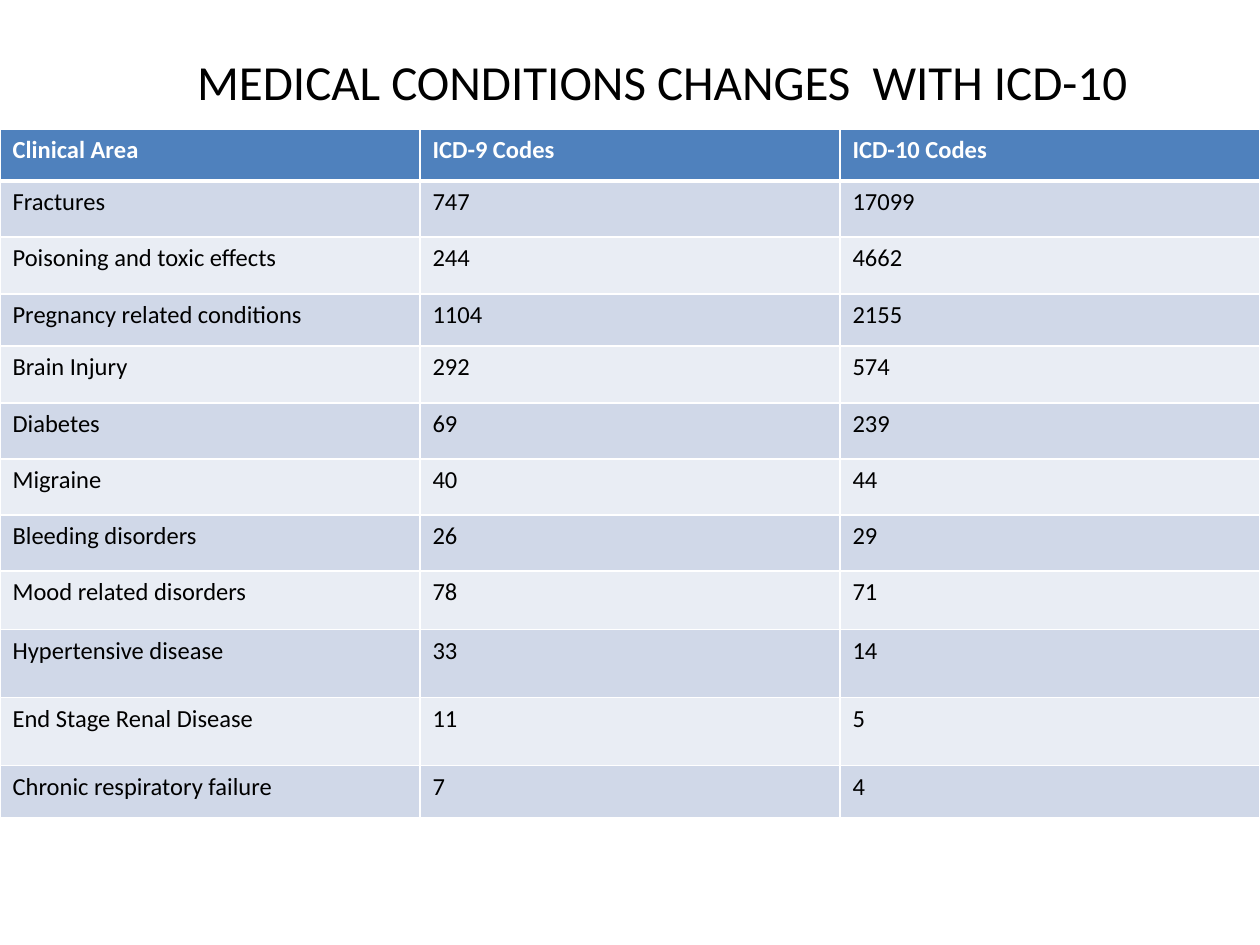
from lxml.etree import SubElement
from pptx import Presentation
from pptx.dml.color import RGBColor
from pptx.enum.text import MSO_ANCHOR, MSO_AUTO_SIZE, PP_ALIGN
from pptx.oxml.ns import qn
from pptx.util import Emu, Pt

PIXELS_PER_INCH = 126
FONT = "Calibri"
WHITE, BLACK = "FFFFFF", "000000"
HEADER_FILL = "4F81BD"
BAND_FILLS = ("E9EDF4", "D0D8E8")

COLUMN_WIDTH = 420
ROW_HEIGHTS = (52, 56, 57, 52, 57, 56, 56, 56, 59, 68, 68, 52)
ROWS = (
    ("Clinical Area", "ICD-9 Codes", "ICD-10 Codes"),
    ("Fractures", "747", "17099"),
    ("Poisoning and toxic effects", "244", "4662"),
    ("Pregnancy related conditions", "1104", "2155"),
    ("Brain Injury", "292", "574"),
    ("Diabetes", "69", "239"),
    ("Migraine", "40", "44"),
    ("Bleeding disorders", "26", "29"),
    ("Mood related disorders", "78", "71"),
    ("Hypertensive disease", "33", "14"),
    ("End Stage Renal Disease", "11", "5"),
    ("Chronic respiratory failure", "7", "4"),
)


def px(length):
    return Emu(round(length * 914400 / PIXELS_PER_INCH))


def color(value):
    return RGBColor.from_string(value)


def style_font(paragraph, size, font_color, bold=False):
    font = paragraph.font
    font.name, font.size, font.bold = FONT, Pt(size), bold
    font.color.rgb = color(font_color)


def set_title(slide, text, left, top, width, height):
    title = slide.shapes.title
    title.left, title.top, title.width, title.height = map(px, (left, top, width, height))
    frame = title.text_frame
    frame.text = text
    frame.word_wrap = True
    frame.auto_size = MSO_AUTO_SIZE.NONE
    frame.vertical_anchor = MSO_ANCHOR.MIDDLE
    # A deep bottom inset lifts the title clear of the table
    frame.margin_bottom = px(66)
    paragraph = frame.paragraphs[0]
    paragraph.alignment = PP_ALIGN.CENTER
    style_font(paragraph, 28, BLACK)


def add_borders(cell, bottom_width):
    properties = cell._tc.get_or_add_tcPr()
    widths = {"a:lnL": 1, "a:lnR": 1, "a:lnT": 1, "a:lnB": bottom_width}
    for tag, width in widths.items():
        line = SubElement(properties, qn(tag), w=str(Pt(width)))
        fill = SubElement(line, qn("a:solidFill"))
        SubElement(fill, qn("a:srgbClr"), val=WHITE)


def fill_cell(cell, text, row_index):
    is_header = row_index == 0
    cell.text = text
    style_font(cell.text_frame.paragraphs[0], 14, WHITE if is_header else BLACK, is_header)
    add_borders(cell, 3 if is_header else 1)
    cell.fill.solid()
    cell.fill.fore_color.rgb = color(HEADER_FILL if is_header else BAND_FILLS[row_index % 2])


def add_code_table(slide, left, top):
    column_count = len(ROWS[0])
    frame = slide.shapes.add_table(
        len(ROWS), column_count, px(left), px(top),
        px(COLUMN_WIDTH * column_count), px(sum(ROW_HEIGHTS)))
    table = frame.table
    for column in table.columns:
        column.width = px(COLUMN_WIDTH)
    for row_index, (height, texts) in enumerate(zip(ROW_HEIGHTS, ROWS)):
        table.rows[row_index].height = px(height)
        for column_index, text in enumerate(texts):
            fill_cell(table.cell(row_index, column_index), text, row_index)
            if row_index == 1:
                # Match the heavy line under the header
                top_line = table.cell(1, column_index)._tc.tcPr.find(qn("a:lnT"))
                top_line.set("w", str(Pt(3)))


def main():
    presentation = Presentation()
    presentation.slide_width, presentation.slide_height = px(1260), px(945)
    slide = presentation.slides.add_slide(presentation.slide_layouts[5])

    # Title
    set_title(slide, "MEDICAL CONDITIONS CHANGES  WITH ICD-10", 95, 32, 1134, 157)

    # Comparison of code counts
    add_code_table(slide, 0, 129)

    presentation.save("out.pptx")


if __name__ == "__main__":
    main()
